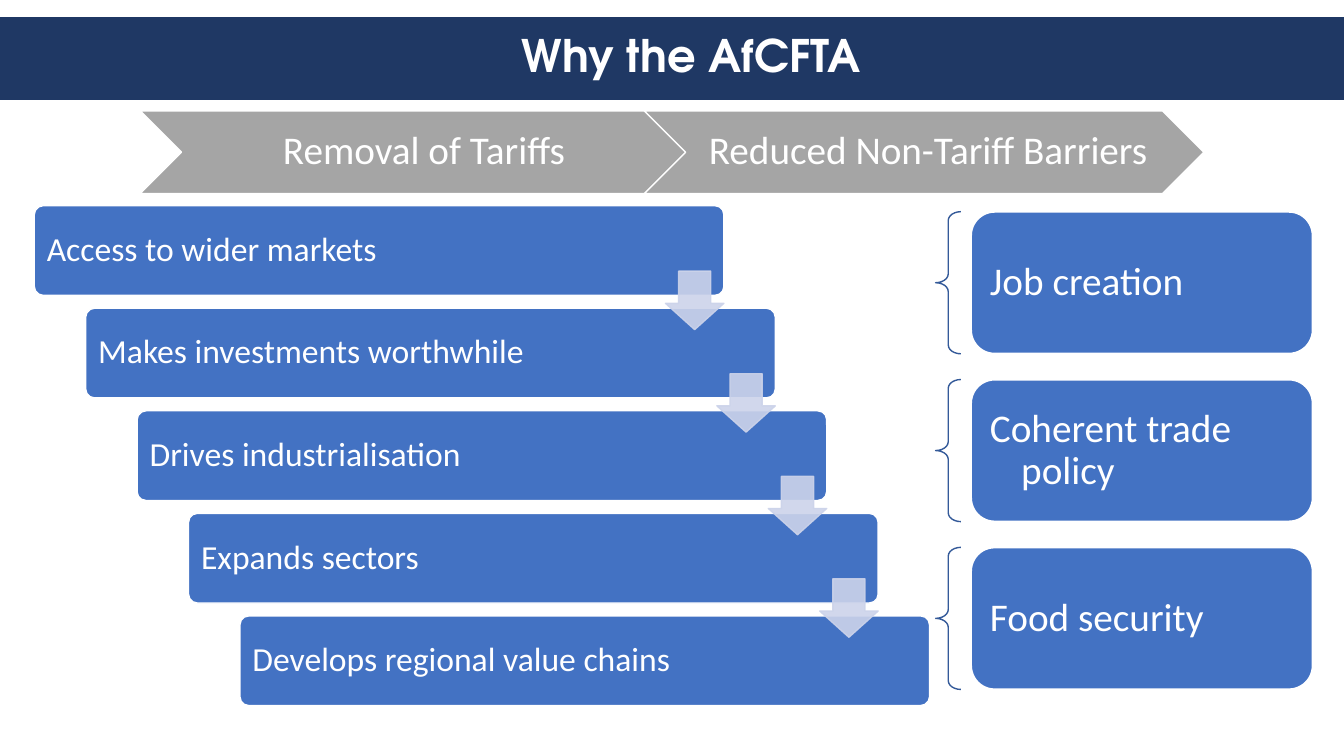
from collections import namedtuple

from lxml.etree import SubElement
from pptx import Presentation
from pptx.dml.color import RGBColor
from pptx.enum.shapes import MSO_SHAPE
from pptx.enum.text import MSO_ANCHOR, PP_ALIGN
from pptx.oxml.ns import qn
from pptx.util import Inches, Pt

NAVY = RGBColor(0x1F, 0x38, 0x64)
BLUE = RGBColor(0x43, 0x72, 0xC3)
BRACE_BLUE = RGBColor(0x34, 0x5A, 0x99)
PALE_BLUE = RGBColor(0xCC, 0xD3, 0xEA)
GREY = RGBColor(0xA5, 0xA5, 0xA5)
WHITE = RGBColor(0xFF, 0xFF, 0xFF)

SLIDE_WIDTH, SLIDE_HEIGHT = 13.33, 7.5
Box = namedtuple("Box", "left top width height")

TITLE_FONT = {"name": "TeX Gyre Adventor", "size": Pt(32), "bold": True}
STEP_FONT = {"name": "Calibri", "size": Pt(24)}
LARGE_FONT = {"name": "Calibri", "size": Pt(28)}


def set_attributes(target, values):
    for name, value in values.items():
        setattr(target, name, value)


def add_shape(slide, kind, box, adjustments, fill, line, line_width=1):
    """Add a flat preset shape; a fill of None leaves it hollow."""
    shape = slide.shapes.add_shape(kind, *map(Inches, box))
    shape.shadow.inherit = False
    for index, value in enumerate(adjustments):
        shape.adjustments[index] = value
    if fill is None:
        shape.fill.background()
    else:
        shape.fill.solid()
        shape.fill.fore_color.rgb = fill
    shape.line.color.rgb = line
    shape.line.width = Pt(line_width)
    return shape


def write_text(shape, text, font, margins, alignment=PP_ALIGN.LEFT, hanging=0):
    frame = shape.text_frame
    sides = ("margin_left", "margin_top", "margin_right", "margin_bottom")
    set_attributes(frame, dict(zip(sides, map(Inches, margins))))
    set_attributes(frame, {"word_wrap": True, "vertical_anchor": MSO_ANCHOR.MIDDLE})
    frame.text = text
    paragraph = frame.paragraphs[0]
    set_attributes(paragraph, {"alignment": alignment, "line_spacing": 0.9})
    if hanging:
        properties = paragraph._p.get_or_add_pPr()
        properties.set("marL", str(Inches(hanging)))
        properties.set("indent", str(-Inches(hanging)))
    run = paragraph.runs[0]
    set_attributes(run.font, font)
    run.font.color.rgb = WHITE


def make_translucent(shape, percent):
    for color in shape._element.spPr.iter(qn("a:srgbClr")):
        SubElement(color, qn("a:alpha"), val=str(percent * 1000))


def add_title(slide, box, text):
    title = slide.shapes.title
    sides = ("left", "top", "width", "height")
    set_attributes(title, dict(zip(sides, map(Inches, box))))
    title.fill.solid()
    title.fill.fore_color.rgb = NAVY
    write_text(title, text, TITLE_FONT, (0.49, 0.1, 0.1, 0.1), PP_ALIGN.CENTER)


def add_chevrons(slide, box, labels):
    """Chevrons of equal width, nested into each other."""
    overlap = 0.55
    width = (box.width + overlap * (len(labels) - 1)) / len(labels)
    for index, label in enumerate(labels):
        left = box.left + index * (width - overlap)
        chevron = add_shape(slide, MSO_SHAPE.CHEVRON, Box(left, box.top, width, box.height),
                            [0.5], GREY, WHITE)
        write_text(chevron, label, LARGE_FONT, (0.12, 0.04, 0.04, 0.04), PP_ALIGN.CENTER)


def add_staircase(slide, box, labels):
    """Steps that move right as they go down, joined by arrows."""
    step_width, step_height, arrow_size = 6.84, 0.89, 0.58
    gaps = len(labels) - 1
    shift = (box.width - step_width) / gaps
    pitch = (box.height - step_height) / gaps
    steps = [Box(box.left + index * shift, box.top + index * pitch, step_width, step_height)
             for index in range(len(labels))]
    for step, label in zip(steps, labels):
        shape = add_shape(slide, MSO_SHAPE.ROUNDED_RECTANGLE, step, [0.1], BLUE, WHITE)
        write_text(shape, label, STEP_FONT, (0.1, 0.1, 0.1, 0.1))
    # Arrows lie over the steps, flush with their right edges
    for step in steps[:-1]:
        place = Box(step.left + step_width - arrow_size, step.top + 0.65, arrow_size, arrow_size)
        arrow = add_shape(slide, MSO_SHAPE.DOWN_ARROW, place, [0.55, 0.45], PALE_BLUE, PALE_BLUE)
        make_translucent(arrow, 90)


def add_outcomes(slide, box, labels):
    """Stacked cards, each with a brace on its left."""
    card_height, brace_width, gap = 1.41, 0.25, 0.1
    pitch = (box.height - card_height) / (len(labels) - 1)
    card_offset = brace_width + gap
    for index, label in enumerate(labels):
        top = box.top + index * pitch
        add_shape(slide, MSO_SHAPE.LEFT_BRACE, Box(box.left, top, brace_width, card_height),
                  [0.35, 0.5], None, BRACE_BLUE)
        place = Box(box.left + card_offset, top, box.width - card_offset, card_height)
        card = add_shape(slide, MSO_SHAPE.ROUNDED_RECTANGLE, place, [0.167], BLUE, WHITE, 1.5)
        write_text(card, label, LARGE_FONT, (0.12, 0.12, 0.12, 0.12), hanging=0.31)


def main():
    presentation = Presentation()
    presentation.slide_width = Inches(SLIDE_WIDTH)
    presentation.slide_height = Inches(SLIDE_HEIGHT)
    slide = presentation.slides.add_slide(presentation.slide_layouts[5])

    add_title(slide, Box(0, 0.17, SLIDE_WIDTH, 0.82), "Why the AfCFTA")
    add_staircase(slide, Box(0.34, 2.04, 8.88, 4.96), [
        "Access to wider markets",
        "Makes investments worthwhile",
        "Drives industrialisation",
        "Expands sectors",
        "Develops regional value chains",
    ])
    add_outcomes(slide, Box(9.28, 2.1, 3.74, 4.74),
                 ["Job creation", "Coherent trade policy", "Food security"])
    add_chevrons(slide, Box(1.39, 1.1, 10.55, 0.82),
                 ["Removal of Tariffs", "Reduced Non-Tariff Barriers"])

    presentation.save("out.pptx")


if __name__ == "__main__":
    main()
